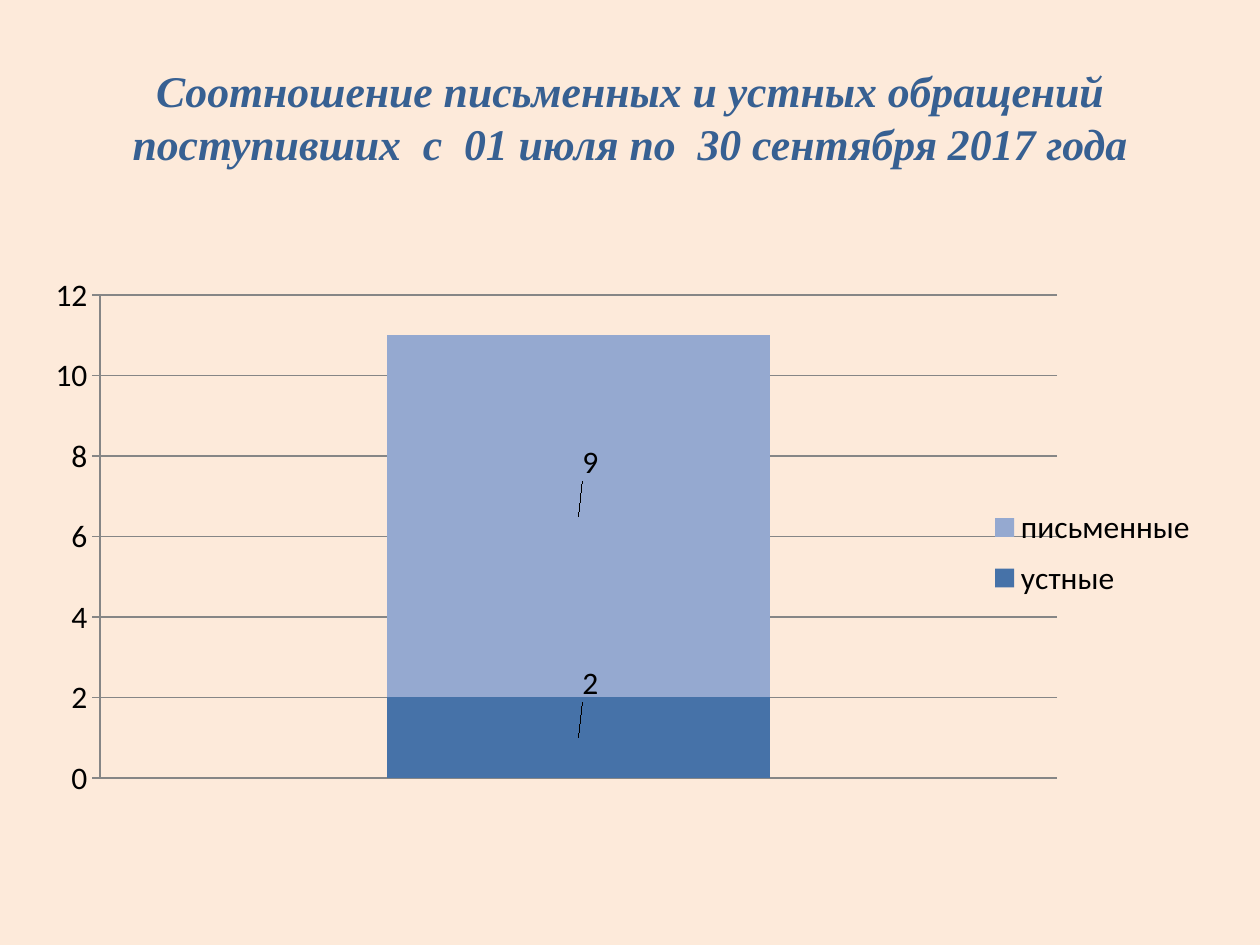
from lxml.etree import SubElement
from pptx import Presentation
from pptx.chart.data import CategoryChartData
from pptx.dml.color import RGBColor
from pptx.enum.chart import (XL_CHART_TYPE, XL_LABEL_POSITION,
                             XL_LEGEND_POSITION, XL_TICK_MARK)
from pptx.enum.text import MSO_ANCHOR, PP_ALIGN
from pptx.oxml.ns import qn
from pptx.util import Inches, Pt

CREAM = RGBColor(0xFD, 0xEA, 0xDA)
NAVY = RGBColor(0x37, 0x60, 0x92)
BLUE = RGBColor(0x46, 0x72, 0xA8)
PALE = RGBColor(0x95, 0xA9, 0xD0)
GRAY = RGBColor(0x86, 0x86, 0x86)
BLACK = RGBColor(0, 0, 0)

TITLE = ("Соотношение письменных и устных обращений "
         "поступивших  с  01 июля по  30 сентября 2017 года")
TITLE_BOX = (0.5, 0.3, 9, 1.25)
TITLE_FONT = dict(name="Times New Roman", size=Pt(25), bold=True, italic=True)
CHART_BOX = (0.23, 2.19, 9.38, 4.33)
CHART_FONT = dict(name="Calibri", size=Pt(18))
# name, value, colour, label shift as a share of the chart
SERIES = [
    ("устные", 2, BLUE, dict(x=0.01, y=-0.1)),
    ("письменные", 9, PALE, dict(x=0.01, y=-0.1)),
]
PLOT = dict(layoutTarget="inner", xMode="edge", yMode="edge",
            x=0.06, y=0.03, w=0.81, h=0.89)
LEGEND = dict(xMode="edge", yMode="edge", x=0.81, y=0.4, w=0.18, h=0.21)


def style(font, color, values):
    for key, value in values.items():
        setattr(font, key, value)
    font.color.rgb = color


def place(part, values, index):
    """Give a chart part a manual layout, as its child at index."""
    for old in part.findall(qn("c:layout")):
        part.remove(old)
    layout = SubElement(part, qn("c:layout"))
    part.insert(index, layout)
    manual = SubElement(layout, qn("c:manualLayout"))
    for key, value in values.items():
        SubElement(manual, qn("c:" + key)).set("val", str(value))


def add_title(slide):
    title = slide.shapes.title
    title.left, title.top, title.width, title.height = map(Inches, TITLE_BOX)
    frame = title.text_frame
    frame.text = TITLE
    frame.word_wrap = True
    frame.vertical_anchor = MSO_ANCHOR.MIDDLE
    line = frame.paragraphs[0]
    line.alignment = PP_ALIGN.CENTER
    style(line.runs[0].font, NAVY, TITLE_FONT)


def add_bars(slide):
    data = CategoryChartData()
    data.categories = ["1"]
    for name, value, *_ in SERIES:
        data.add_series(name, [value])
    chart = slide.shapes.add_chart(
        XL_CHART_TYPE.COLUMN_STACKED, *map(Inches, CHART_BOX), data
    ).chart
    style(chart.font, BLACK, CHART_FONT)
    chart.has_title = False
    chart.has_legend = True
    chart.legend.position = XL_LEGEND_POSITION.RIGHT
    chart.legend.include_in_layout = False

    chart.category_axis.visible = False
    axis = chart.value_axis
    axis.minimum_scale, axis.maximum_scale, axis.major_unit = 0, 12, 2
    axis.major_tick_mark = XL_TICK_MARK.OUTSIDE
    axis.has_major_gridlines = True
    for line in (axis.format.line, axis.major_gridlines.format.line):
        line.color.rgb = GRAY
        line.width = Pt(0.75)

    plot = chart.plots[0]
    plot.gap_width, plot.overlap, plot.vary_by_categories = 150, 100, False
    for bar, (_, _, color, shift) in zip(plot.series, SERIES):
        bar.format.fill.solid()
        bar.format.fill.fore_color.rgb = color
        bar.data_labels.show_value = True
        bar.points[0].data_label.position = XL_LABEL_POSITION.CENTER

    space = chart.element
    for label, (*_, shift) in zip(space.iter(qn("c:dLbl")), SERIES):
        place(label, shift, 1)
    place(next(space.iter(qn("c:plotArea"))), PLOT, 0)
    place(next(space.iter(qn("c:legend"))), LEGEND, 1)


def main():
    deck = Presentation()
    deck.slide_width, deck.slide_height = Inches(10), Inches(7.5)
    slide = deck.slides.add_slide(deck.slide_layouts[5])
    slide.background.fill.solid()
    slide.background.fill.fore_color.rgb = CREAM
    add_title(slide)
    add_bars(slide)
    deck.save("out.pptx")


if __name__ == "__main__":
    main()
